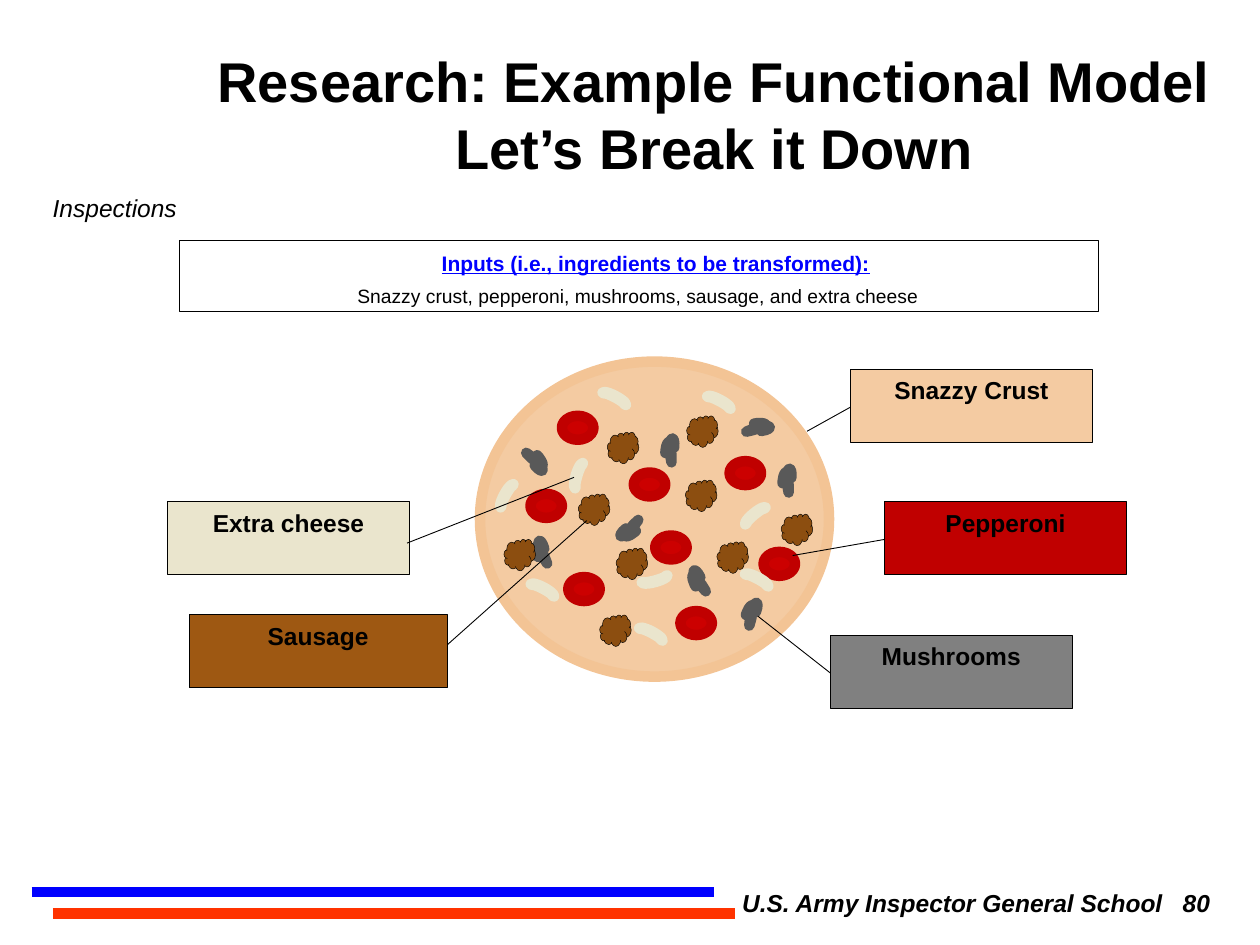
from math import cos, radians, sin

from lxml import etree
from pptx import Presentation
from pptx import util as u
from pptx.dml.color import RGBColor
from pptx.enum import shapes, text
from pptx.oxml import ns

WIDTH, HEIGHT = u.Inches(10), u.Inches(7.5)
COL, ROW = WIDTH / 100, HEIGHT / 75  # square grid cells

BLACK = RGBColor(0x00, 0x00, 0x00)
WHITE = RGBColor(0xFF, 0xFF, 0xFF)
BLUE = RGBColor(0x00, 0x00, 0xFF)
ORANGE = RGBColor(0xFF, 0x33, 0x00)
CRUST = RGBColor(0xF4, 0xCB, 0xA2)
CRUST_EDGE = RGBColor(0xF3, 0xC4, 0x95)
PEPPERONI = RGBColor(0xCC, 0x00, 0x00)
PEPPERONI_EDGE = RGBColor(0xC0, 0x00, 0x00)
MUSHROOM = RGBColor(0x59, 0x59, 0x59)
MUSHROOM_LABEL = RGBColor(0x80, 0x80, 0x80)
SAUSAGE = RGBColor(0x8C, 0x4E, 0x10)
SAUSAGE_LABEL = RGBColor(0x9E, 0x58, 0x12)
CHEESE = RGBColor(0xEA, 0xE5, 0xCD)
CHEESE_FILL = RGBColor(0xFF, 0xC0, 0x00)

KIND = shapes.MSO_SHAPE
TOPPING_LINE = 6

# Centres in columns and rows, with a rotation where the topping is turned
PEPPERONI_SPOTS = [(45.85, 33.95), (59.15, 37.55), (51.55, 38.45), (53.25, 43.45),
                   (43.35, 40.15), (55.25, 49.45), (61.85, 44.75), (46.35, 46.75)]
MUSHROOM_SPOTS = [(62.6, 37.9, 95.8), (53.3, 35.5, 95.8), (60.4, 34, 172.9),
                  (59.8, 48.5, 111.4), (55.4, 45.9, 64.6), (49.8, 42.1, 321.2),
                  (42.6, 36.8, 231.2), (43.0, 43.6, 74.8)]
SAUSAGE_SPOTS = [(55.75, 34.25), (55.65, 39.35), (63.25, 42.05), (58.15, 44.25),
                 (49.45, 35.55), (47.15, 40.45), (48.85, 50.05), (41.25, 44.05),
                 (50.15, 44.75)]
CHEESE_SPOTS = [(51.95, 45.95, 164.8), (45.95, 37.75, 287), (59.95, 40.95, 320.3),
                (57.05, 31.95, 27.8), (60.05, 46.05, 27.8), (43.05, 46.85, 27.8),
                (51.65, 50.35, 27.8), (48.75, 31.65, 27.8), (40.25, 39.35, 298.8)]


def cells(left, top, width, height):
    return [u.Emu(round(n * unit)) for n, unit in
            zip((left, top, width, height), (COL, ROW, COL, ROW))]


def paint(shape, fill, line, weight):
    shape.shadow.inherit = False
    shape.fill.solid()
    shape.fill.fore_color.rgb = fill
    shape.line.color.rgb = line
    shape.line.width = u.Pt(weight)


def write(frame, lines, color=BLACK, align=text.PP_ALIGN.CENTER, wrap=True, **font):
    frame.word_wrap = wrap
    frame.vertical_anchor = text.MSO_ANCHOR.TOP
    for index, line in enumerate(lines):
        paragraph = frame.paragraphs[0] if index == 0 else frame.add_paragraph()
        paragraph.text = line
        paragraph.alignment = align
        for name, value in {"name": "Arial", **font}.items():
            setattr(paragraph.font, name, value)
        paragraph.font.color.rgb = color


def add_words(slide, box, *lines, **style):
    write(slide.shapes.add_textbox(*cells(*box)).text_frame, lines, **style)


def add_bar(slide, left, top, right, color):
    x1, y, x2, _ = cells(left, top, right, 0)
    bar = slide.shapes.add_connector(shapes.MSO_CONNECTOR.STRAIGHT, x1, y, x2, y)
    bar.line.color.rgb = color
    bar.line.width = u.Pt(6)
    etree.SubElement(bar._element.spPr, ns.qn("a:effectLst"))


def add_shape(slide, kind, box, fill, line, weight):
    shape = slide.shapes.add_shape(kind, *cells(*box))
    paint(shape, fill, line, weight)
    return shape


def add_callout(slide, label, box, pointer, fill):
    """Label whose pointer is start y, start x, end y, end x as shares of the box."""
    callout = add_shape(slide, KIND.LINE_CALLOUT_1, box, fill, BLACK, 0.5)
    for index, share in enumerate(pointer):
        callout.adjustments[index] = share
    write(callout.text_frame, [label], wrap=False, size=u.Pt(14), bold=True)


def add_topping(slide, kind, center, size, fill, line, weight=TOPPING_LINE, turn=0):
    (x, y), (width, height) = center, size
    box = (x - width / 2, y - height / 2, width, height)
    add_shape(slide, kind, box, fill, line, weight).rotation = turn


def add_stem(slide, x, y, turn):
    builder = slide.shapes.build_freeform(-60, 0, scale=COL / 100)
    builder.add_line_segments([(0, -5), (60, 0), (0, 5)], close=True)
    stem = builder.convert_to_shape(round(x * COL), round(y * ROW))
    paint(stem, BLACK, MUSHROOM, TOPPING_LINE)
    stem.rotation = turn


def add_mushroom(slide, x, y, turn):
    """Two cap halves and a stem, placed along the turned axis of the mushroom."""
    def along(forward, side):
        c, s = cos(radians(turn)), sin(radians(turn))
        return x + forward * c - side * s, y + forward * s + side * c

    for center in ((x, y), along(0.3, 0.25)):
        add_topping(slide, KIND.CHORD, center, (1.4, 0.4), BLACK, MUSHROOM, turn=turn)
    add_stem(slide, *along(0.6, 0), turn - 10.6)


def add_frame(slide):
    add_bar(slide, 2.5, 70.8, 56.7, BLUE)
    add_bar(slide, 4.2, 72.5, 58.3, ORANGE)
    add_words(slide, (3.2, 14.8, 12.6, 5), "Inspections",
              align=text.PP_ALIGN.LEFT, size=u.Pt(14), italic=True)
    add_words(slide, (55, 70, 45, 5), "U.S. Army Inspector General School   80",
              size=u.Pt(14), bold=True, italic=True)
    add_words(slide, (16, 3.2, 81.4, 11.8), "Research: Example Functional Model",
              "Let’s Break it Down", wrap=False, size=u.Pt(32), bold=True)


def add_inputs(slide):
    add_shape(slide, KIND.RECTANGLE, (14.2, 19.1, 73, 5.6), WHITE, BLACK, 0.38)
    add_words(slide, (32, 19.4, 40.1, 3), "Inputs (i.e., ingredients to be transformed):",
              color=BLUE, size=u.Pt(12), bold=True, underline=True)
    add_words(slide, (14.3, 22.1, 72.7, 2.9),
              "Snazzy crust, pepperoni, mushrooms, sausage, and extra cheese",
              size=u.Pt(11))


def add_pizza(slide):
    add_callout(slide, "Snazzy Crust", (67.5, 29.3, 19.2, 5.8),
                (0.52, 0, 0.85, -0.18), CRUST)
    add_shape(slide, KIND.OVAL, (38.1, 28.7, 27.7, 25), CRUST, CRUST_EDGE, 6)
    for spot in PEPPERONI_SPOTS:
        add_topping(slide, KIND.OVAL, spot, (2.5, 1.9), PEPPERONI, PEPPERONI_EDGE)
    add_callout(slide, "Pepperoni", (70.2, 39.8, 19.2, 5.8),
                (0.52, 0, 0.74, -0.38), PEPPERONI_EDGE)
    for x, y, turn in MUSHROOM_SPOTS:
        add_mushroom(slide, x, y, turn)
    add_callout(slide, "Mushrooms", (65.9, 50.4, 19.2, 5.8),
                (0.52, 0, -0.26, -0.3), MUSHROOM_LABEL)
    for spot in SAUSAGE_SPOTS:
        add_topping(slide, KIND.CLOUD, spot, (2.5, 2.5), SAUSAGE, BLACK, 0.25)
    add_callout(slide, "Sausage", (15, 48.8, 20.5, 5.8),
                (0.41, 1, -1.29, 1.54), SAUSAGE_LABEL)
    for x, y, turn in CHEESE_SPOTS:
        add_topping(slide, KIND.BLOCK_ARC, (x, y), (2.1, 0.5), CHEESE_FILL, CHEESE,
                    turn=turn)
    add_callout(slide, "Extra cheese", (13.3, 39.8, 19.2, 5.8),
                (0.57, 0.99, -0.33, 1.68), CHEESE)


def main():
    deck = Presentation()
    deck.slide_width, deck.slide_height = WIDTH, HEIGHT
    slide = deck.slides.add_slide(deck.slide_layouts[6])
    add_frame(slide)
    add_inputs(slide)
    add_pizza(slide)
    deck.save("out.pptx")


if __name__ == "__main__":
    main()
